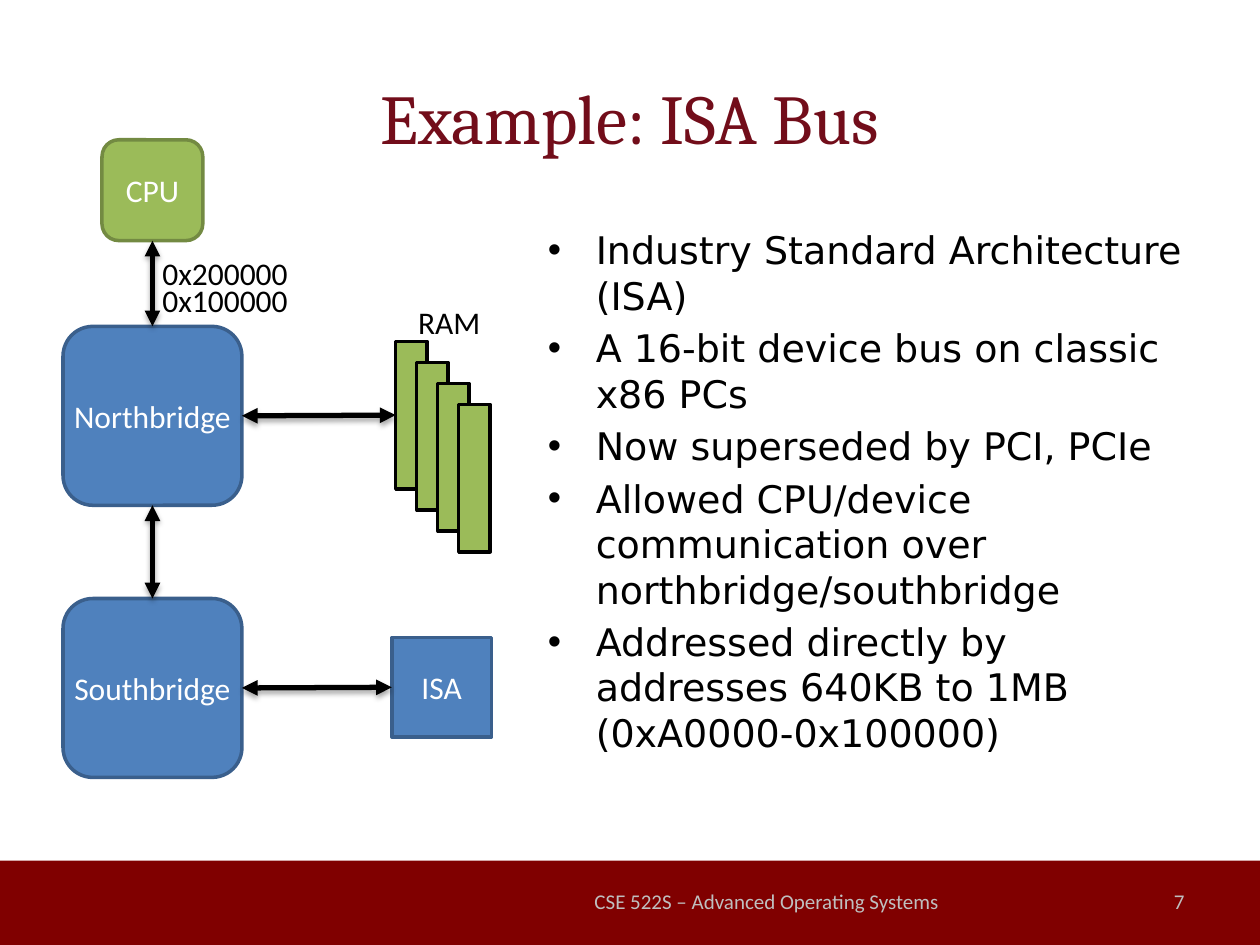
from lxml import etree
from pptx import Presentation
from pptx.dml.color import RGBColor
from pptx.enum.shapes import MSO_CONNECTOR, MSO_SHAPE
from pptx.enum.text import MSO_ANCHOR, MSO_AUTO_SIZE, PP_ALIGN
from pptx.oxml import parse_xml
from pptx.oxml.ns import nsdecls, qn
from pptx.util import Inches, Pt

RECTANGLE, ROUNDED = MSO_SHAPE.RECTANGLE, MSO_SHAPE.ROUNDED_RECTANGLE
STRAIGHT = MSO_CONNECTOR.STRAIGHT
LEFT, CENTER, RIGHT = PP_ALIGN.LEFT, PP_ALIGN.CENTER, PP_ALIGN.RIGHT
TOP, MIDDLE = MSO_ANCHOR.TOP, MSO_ANCHOR.MIDDLE
GROW = MSO_AUTO_SIZE.SHAPE_TO_FIT_TEXT

WHITE = RGBColor(0xFF, 0xFF, 0xFF)
BLACK = RGBColor(0x00, 0x00, 0x00)
MAROON = RGBColor(0x80, 0x00, 0x00)
TITLE_RED = RGBColor(0x72, 0x0D, 0x1A)
GRAY = RGBColor(0xBF, 0xBF, 0xBF)
GREEN = RGBColor(0x9B, 0xBB, 0x59)
DARK_GREEN = RGBColor(0x73, 0x8A, 0x42)
BLUE = RGBColor(0x4F, 0x81, 0xBD)
DARK_BLUE = RGBColor(0x3A, 0x5F, 0x8C)

SHADOW = (
    f'<a:effectLst {nsdecls("a")}>'
    '<a:outerShdw blurRad="39370" dist="22860" dir="5400000" rotWithShape="0">'
    '<a:srgbClr val="000000"><a:alpha val="35000"/></a:srgbClr>'
    '</a:outerShdw></a:effectLst>'
)

presentation = Presentation()
presentation.slide_width = Inches(10)
presentation.slide_height = Inches(7.5)
slide = presentation.slides.add_slide(presentation.slide_layouts[6])


def add_box(kind, left, top, width, height, fill, line=None):
    shape = slide.shapes.add_shape(
        kind, Inches(left), Inches(top), Inches(width), Inches(height))
    shape.shadow.inherit = False
    shape.fill.solid()
    shape.fill.fore_color.rgb = fill
    if line is None:
        shape.line.fill.background()
    else:
        shape.line.color.rgb = line
        shape.line.width = Pt(2)
    return shape


def write(paragraph, text, size, font, color, alignment):
    paragraph.alignment = alignment
    run = paragraph.add_run()
    run.text = text
    run.font.size = Pt(size)
    run.font.name = font
    run.font.color.rgb = color


add_box(RECTANGLE, 0, 6.83, 10, 0.67, MAROON)

labels = [
    ("Example: ISA Bus", 0.5, 0.3, 9, 1.25, 40, "Cambria", TITLE_RED, CENTER, MIDDLE, True),
    ("CSE 522S – Advanced Operating Systems", 4.5, 6.95, 3.17, 0.4, 12, "Calibri", GRAY, CENTER, MIDDLE, True),
    ("7", 7.17, 6.95, 2.33, 0.4, 12, "Calibri", GRAY, RIGHT, MIDDLE, True),
    ("RAM", 3.22, 2.36, 0.7, 0.4, 18, "Calibri", BLACK, LEFT, TOP, False),
    ("0x200000", 1.19, 1.97, 1.21, 0.4, 18, "Calibri", BLACK, LEFT, TOP, False),
    ("0x100000", 1.19, 2.18, 1.21, 0.4, 18, "Calibri", BLACK, LEFT, TOP, False),
]
for text, left, top, width, height, size, font, color, alignment, anchor, wrap in labels:
    label = slide.shapes.add_textbox(Inches(left), Inches(top), Inches(width), Inches(height))
    frame = label.text_frame
    frame.word_wrap = wrap
    frame.vertical_anchor = anchor
    if not wrap:
        frame.auto_size = GROW
    write(frame.paragraphs[0], text, size, font, color, alignment)

bullets = [
    "Industry Standard Architecture (ISA)",
    "A 16-bit device bus on classic x86 PCs",
    "Now superseded by PCI, PCIe",
    "Allowed CPU/device communication over northbridge/southbridge",
    "Addressed directly by addresses 640KB to 1MB (0xA0000-0x100000)",
]
body = slide.shapes.add_textbox(Inches(4.25), Inches(1.75), Inches(5.25), Inches(4.95))
body.text_frame.word_wrap = True
for index, text in enumerate(bullets):
    paragraph = body.text_frame.paragraphs[0] if index == 0 else body.text_frame.add_paragraph()
    properties = paragraph._p.get_or_add_pPr()
    properties.set("marL", str(Inches(0.38)))
    properties.set("indent", str(-Inches(0.38)))
    etree.SubElement(properties, qn("a:buFont")).set("typeface", "Arial")
    etree.SubElement(properties, qn("a:buChar")).set("char", "•")
    paragraph.line_spacing = Pt(26)
    if index > 0:
        paragraph.space_before = Pt(4)
    write(paragraph, text, 21.7, "DejaVu Sans", BLACK, LEFT)

nodes = {}
for name, kind, left, top, side, fill, line in [
    ("CPU", ROUNDED, 0.81, 1.11, 0.8, GREEN, DARK_GREEN),
    ("Northbridge", ROUNDED, 0.5, 2.59, 1.42, BLUE, DARK_BLUE),
    ("Southbridge", ROUNDED, 0.5, 4.75, 1.42, BLUE, DARK_BLUE),
    ("ISA", RECTANGLE, 3.11, 5.06, 0.79, BLUE, DARK_BLUE),
]:
    node = add_box(kind, left, top, side, side, fill, line)
    frame = node.text_frame
    frame.margin_left = frame.margin_right = frame.margin_top = frame.margin_bottom = 0
    frame.vertical_anchor = MIDDLE
    write(frame.paragraphs[0], name, 18, "Calibri", WHITE, CENTER)
    nodes[name] = node

ram_modules = [
    add_box(RECTANGLE, 3.14 + step / 6, 2.71 + step / 6, 0.25, 1.17, GREEN, BLACK)
    for step in range(4)
]
nodes["RAM"] = ram_modules[0]

for start, start_site, end, end_site in [
    ("CPU", 2, "Northbridge", 0),
    ("Northbridge", 2, "Southbridge", 0),
    ("Northbridge", 3, "RAM", 1),
    ("Southbridge", 3, "ISA", 1),
]:
    bus = slide.shapes.add_connector(STRAIGHT, 0, 0, 0, 0)
    bus.begin_connect(nodes[start], start_site)
    bus.end_connect(nodes[end], end_site)
    bus.line.color.rgb = BLACK
    bus.line.width = Pt(3)
    line = bus.line._get_or_add_ln()
    for arrowhead in ("a:headEnd", "a:tailEnd"):
        etree.SubElement(line, qn(arrowhead)).set("type", "triangle")
    bus._element.spPr.append(parse_xml(SHADOW))

presentation.save("out.pptx")
